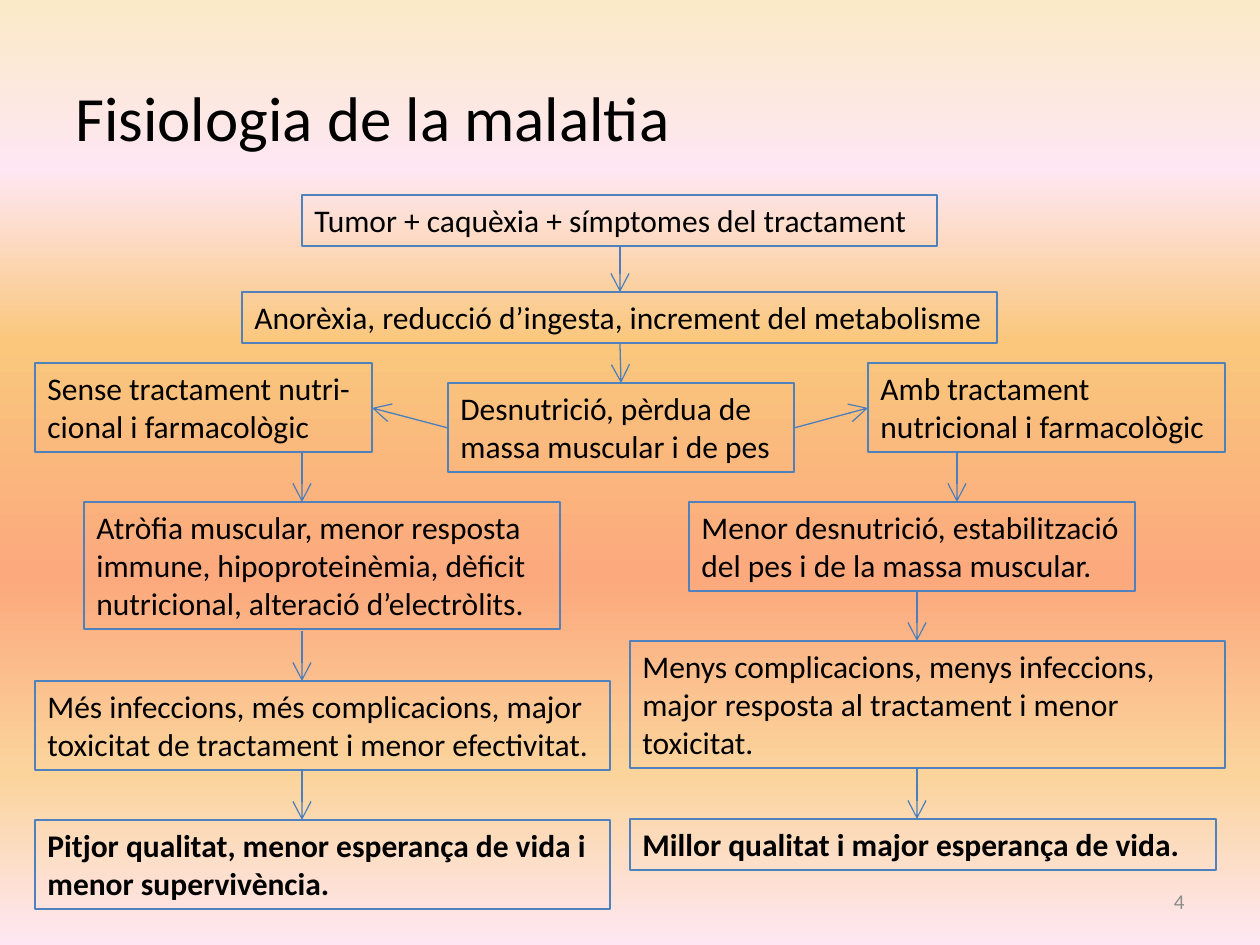
from lxml.etree import SubElement
from pptx import Presentation
from pptx.dml.color import RGBColor
from pptx.enum.shapes import MSO_CONNECTOR, MSO_SHAPE
from pptx.enum.text import MSO_ANCHOR, MSO_AUTO_SIZE, PP_ALIGN
from pptx.oxml.ns import qn
from pptx.util import Emu, Pt

SCALE = 914400 / 126
STOPS = [(0, "FBEAC7"), (18, "FEE7F2"), (36, "FAC77D"),
         (61, "FBA97D"), (82, "FBD49C"), (100, "FEE7F2")]
BOXES = [
    (302, 195, 635, 1, "Tumor + caquèxia + símptomes del tractament", {}),
    (242, 292, 755, 1, "Anorèxia, reducció d’ingesta, increment del metabolisme", {}),
    (35, 363, 337, 2, "Sense tractament nutri-cional i farmacològic", {}),
    (448, 383, 346, 2, "Desnutrició, pèrdua de massa muscular i de pes", {}),
    (868, 363, 357, 2, "Amb tractament nutricional i farmacològic", {}),
    (84, 502, 476, 3, "Atròfia muscular, menor resposta immune, hipoproteinèmia, "
     "dèficit nutricional, alteració d’electròlits.", {}),
    (689, 502, 446, 2, "Menor desnutrició, estabilització del pes i de la massa muscular.", {}),
    (630, 819, 586, 1, "Millor qualitat i major esperança de vida.", {"bold": True}),
    (630, 641, 595, 3, "Menys complicacions, menys infeccions, major resposta al "
     "tractament i menor toxicitat.", {}),
    (35, 820, 575, 2, "Pitjor qualitat, menor esperança de vida i menor supervivència.",
     {"bold": True, "width": 1}),
    (35, 681, 575, 2, "Més infeccions, més complicacions, major toxicitat de tractament "
     "i menor efectivitat.", {"width": 1}),
]
ARROWS = [
    (620, 246, 620, 292), (620, 344, 621, 383),
    (794, 428, 868, 408), (448, 428, 372, 408),
    (957, 452, 957, 502), (302, 452, 302, 502),
    (917, 591, 917, 641), (917, 769, 917, 819),
    (302, 631, 302, 681), (302, 770, 302, 820),
]


def px(*nums):
    return [Emu(round(num * SCALE)) for num in nums]


def color(code):
    return RGBColor.from_string(code)


def write(frame, text, size=18, ink="000000", bold=False,
          align=PP_ALIGN.LEFT, anchor=MSO_ANCHOR.TOP):
    frame.word_wrap = True
    frame.vertical_anchor = anchor
    line = frame.paragraphs[0]
    line.alignment = align
    run = line.add_run()
    run.text = text
    run.font.name = "Calibri"
    run.font.size = Pt(size)
    run.font.bold = bold
    run.font.color.rgb = color(ink)


class Chart:
    """Draws the flow chart's elements on one slide in one style."""

    def __init__(self, slide, edge="4F81BD", wire="4B7EBC"):
        self.slide, self.edge, self.wire = slide, edge, wire

    def backdrop(self, stops):
        fill = self.slide.background.fill
        fill.gradient()
        fill.gradient_angle = 270
        group = next(self.slide.element.iter(qn("a:gsLst")))
        for stop in list(group):
            group.remove(stop)
        for place, code in stops:
            stop = SubElement(group, qn("a:gs"), pos=str(place * 1000))
            SubElement(stop, qn("a:srgbClr"), val=code)

    def label(self, left, top, wide, high, text, **style):
        area = self.slide.shapes.add_textbox(*px(left, top, wide, high))
        write(area.text_frame, text, anchor=MSO_ANCHOR.MIDDLE, **style)

    def box(self, left, top, wide, rows, text, width=0.75, **style):
        area = px(left, top, wide, 13 + 38 * rows)
        shape = self.slide.shapes.add_shape(MSO_SHAPE.RECTANGLE, *area)
        shape.shadow.inherit = False
        shape.fill.background()
        shape.line.color.rgb = color(self.edge)
        shape.line.width = Pt(width)
        write(shape.text_frame, text, **style)
        shape.text_frame.auto_size = MSO_AUTO_SIZE.SHAPE_TO_FIT_TEXT

    def arrow(self, *ends):
        link = self.slide.shapes.add_connector(MSO_CONNECTOR.STRAIGHT, *px(*ends))
        link.line.color.rgb = color(self.wire)
        link.line.width = Pt(0.75)
        SubElement(link.line._get_or_add_ln(), qn("a:tailEnd"),
                   type="arrow", w="lg", len="lg")
        SubElement(link.element.spPr, qn("a:effectLst"))


def main():
    deck = Presentation()
    deck.slide_width, deck.slide_height = px(1260, 945)
    chart = Chart(deck.slides.add_slide(deck.slide_layouts[6]))
    chart.backdrop(STOPS)
    chart.label(63, 38, 1134, 157, "Fisiologia de la malaltia", size=36)
    chart.label(903, 876, 294, 50, "4", size=12, ink="8C8C8C", align=PP_ALIGN.RIGHT)
    for left, top, wide, rows, text, style in BOXES:
        chart.box(left, top, wide, rows, text, **style)
    for ends in ARROWS:
        chart.arrow(*ends)
    deck.save("out.pptx")


if __name__ == "__main__":
    main()
